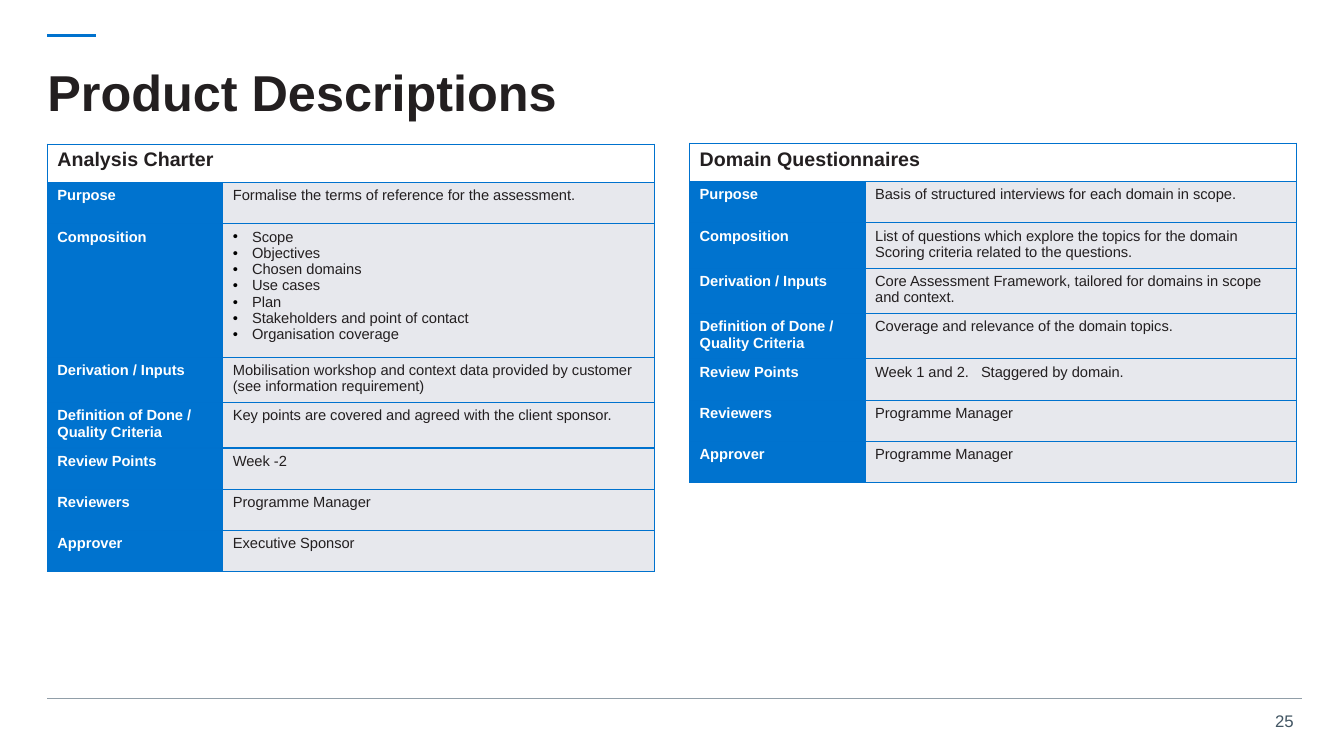
from lxml import etree
from pptx import Presentation
from pptx.dml.color import RGBColor
from pptx.enum.shapes import MSO_CONNECTOR
from pptx.enum.text import MSO_ANCHOR, PP_ALIGN
from pptx.oxml.ns import qn
from pptx.util import Inches, Pt

STRAIGHT = MSO_CONNECTOR.STRAIGHT
MIDDLE, TOP = MSO_ANCHOR.MIDDLE, MSO_ANCHOR.TOP
LEFT, RIGHT = PP_ALIGN.LEFT, PP_ALIGN.RIGHT

# Content
TITLE = "Product Descriptions"
PAGE = "25"
LABELS = ["Purpose", "Composition", "Derivation / Inputs",
          "Definition of Done / Quality Criteria",
          "Review Points", "Reviewers", "Approver"]
# A tuple holds plain paragraphs, a list holds bullets
PRODUCTS = [
    ("Analysis Charter", 1.43, [
        ("Formalise the terms of reference for the assessment.",),
        ["Scope", "Objectives", "Chosen domains", "Use cases", "Plan",
         "Stakeholders and point of contact", "Organisation coverage"],
        ("Mobilisation workshop and context data provided by customer "
         "(see information requirement)",),
        ("Key points are covered and agreed with the client sponsor.",),
        ("Week -2",),
        ("Programme Manager",),
        ("Executive Sponsor",),
    ]),
    ("Domain Questionnaires", 1.42, [
        ("Basis of structured interviews for each domain in scope.",),
        ("List of questions which explore the topics for the domain",
         "Scoring criteria related to the questions."),
        ("Core Assessment Framework, tailored for domains in scope "
         "and context.",),
        ("Coverage and relevance of the domain topics.",),
        ("Week 1 and 2.\tStaggered by domain.",),
        ("Programme Manager",),
        ("Programme Manager",),
    ]),
]

# Style and grid, in inches
FONT = "Arial"
COLORS = {"ink": "231F20", "white": "FFFFFF", "label": "0073CF",
          "body": "E7E8ED", "accent": "0072CE", "rule": "919EA8",
          "page": "425563", "bullet": "000000"}
WIDTH, HEIGHT = 13.33, 7.5
MARGIN = 0.47
COLUMNS = [1.74, 4.28]
GAP = 0.35
HEAD_ROW, ROW = 0.38, 0.41
BULLET_INDENT, TAB_STOP = 0.19, 1.05


def color(name):
    return RGBColor.from_string(COLORS[name])


def add_run(p, text, size, ink, bold=False):
    r = p.add_run()
    r.text = text
    r.font.name, r.font.size, r.font.bold = FONT, Pt(size), bold
    r.font.color.rgb = color(ink)


def add_text(s, box, text, size, ink, bold=False, align=LEFT, anchor=TOP, inset=(0, 0)):
    tf = s.shapes.add_textbox(*map(Inches, box)).text_frame
    tf.word_wrap = True
    tf.vertical_anchor = anchor
    tf.margin_left = tf.margin_right = Inches(inset[0])
    tf.margin_top = tf.margin_bottom = Inches(inset[1])
    p = tf.paragraphs[0]
    p.alignment = align
    add_run(p, text, size, ink, bold)
    return p


def add_rule(s, x1, x2, y, ink, width):
    line = s.shapes.add_connector(STRAIGHT, *map(Inches, (x1, y, x2, y)))
    line.line.color.rgb = color(ink)
    line.line.width = Pt(width)
    etree.SubElement(line._element.spPr, qn("a:effectLst"))


def add_bullet(p):
    pPr = p._p.get_or_add_pPr()
    pPr.set("marL", str(Inches(BULLET_INDENT)))
    pPr.set("indent", str(-Inches(BULLET_INDENT)))
    clr = etree.SubElement(pPr, qn("a:buClr"))
    etree.SubElement(clr, qn("a:srgbClr"), val=COLORS["bullet"])
    etree.SubElement(pPr, qn("a:buFont"), typeface=FONT)
    etree.SubElement(pPr, qn("a:buChar"), char="•")


def add_tab(p):
    tabs = etree.SubElement(p._p.get_or_add_pPr(), qn("a:tabLst"))
    etree.SubElement(tabs, qn("a:tab"), pos=str(Inches(TAB_STOP)), algn="l")


def style_cell(cell, fill):
    tcPr = cell._tc.get_or_add_tcPr()
    for side in ("lnL", "lnR", "lnT", "lnB"):
        ln = etree.SubElement(tcPr, qn("a:" + side), w=str(Pt(1)))
        solid = etree.SubElement(ln, qn("a:solidFill"))
        etree.SubElement(solid, qn("a:srgbClr"), val=COLORS["accent"])
    cell.fill.solid()
    cell.fill.fore_color.rgb = color(fill)


def fill_cell(cell, lines, size, ink, bold=False):
    tf = cell.text_frame
    for i, line in enumerate(lines):
        p = tf.add_paragraph() if i else tf.paragraphs[0]
        if isinstance(lines, list):
            add_bullet(p)
        if "\t" in line:
            add_tab(p)
        add_run(p, line, size, ink, bold)


def add_product(s, left, top, name, details):
    height = HEAD_ROW + ROW * len(LABELS)
    table = s.shapes.add_table(len(LABELS) + 1, len(COLUMNS), *map(
        Inches, (left, top, sum(COLUMNS), height))).table
    table.first_row = table.horz_banding = False
    for column, width in zip(table.columns, COLUMNS):
        column.width = Inches(width)
    for i, row in enumerate(table.rows):
        row.height = Inches(ROW if i else HEAD_ROW)
        for cell, fill in zip(row.cells, ("label", "body")):
            style_cell(cell, fill if i else "white")
    table.cell(0, 0).merge(table.cell(0, 1))
    fill_cell(table.cell(0, 0), (name,), 14, "ink", True)
    for i, (label, lines) in enumerate(zip(LABELS, details), 1):
        fill_cell(table.cell(i, 0), (label,), 10.5, "white", True)
        fill_cell(table.cell(i, 1), lines, 10.5, "ink")


def main():
    prs = Presentation()
    prs.slide_width, prs.slide_height = Inches(WIDTH), Inches(HEIGHT)
    s = prs.slides.add_slide(prs.slide_layouts[6])

    # Frame: page number, accent, footer rule
    add_text(s, (12.52, 7, 0.41, 0.3), PAGE, 12, "page", align=RIGHT, inset=(0.1, 0.05))
    add_rule(s, MARGIN, 0.95, 0.35, "accent", 2)
    add_rule(s, MARGIN, 12.91, 6.93, "rule", 0.75)

    # Title
    p = add_text(s, (MARGIN, 0.47, 12.47, 0.95), TITLE, 36, "ink", True, anchor=MIDDLE)
    p.line_spacing = 0.9

    # One table per product, side by side
    for i, (name, top, details) in enumerate(PRODUCTS):
        add_product(s, MARGIN + i * (sum(COLUMNS) + GAP), top, name, details)

    prs.save("out.pptx")


if __name__ == "__main__":
    main()
